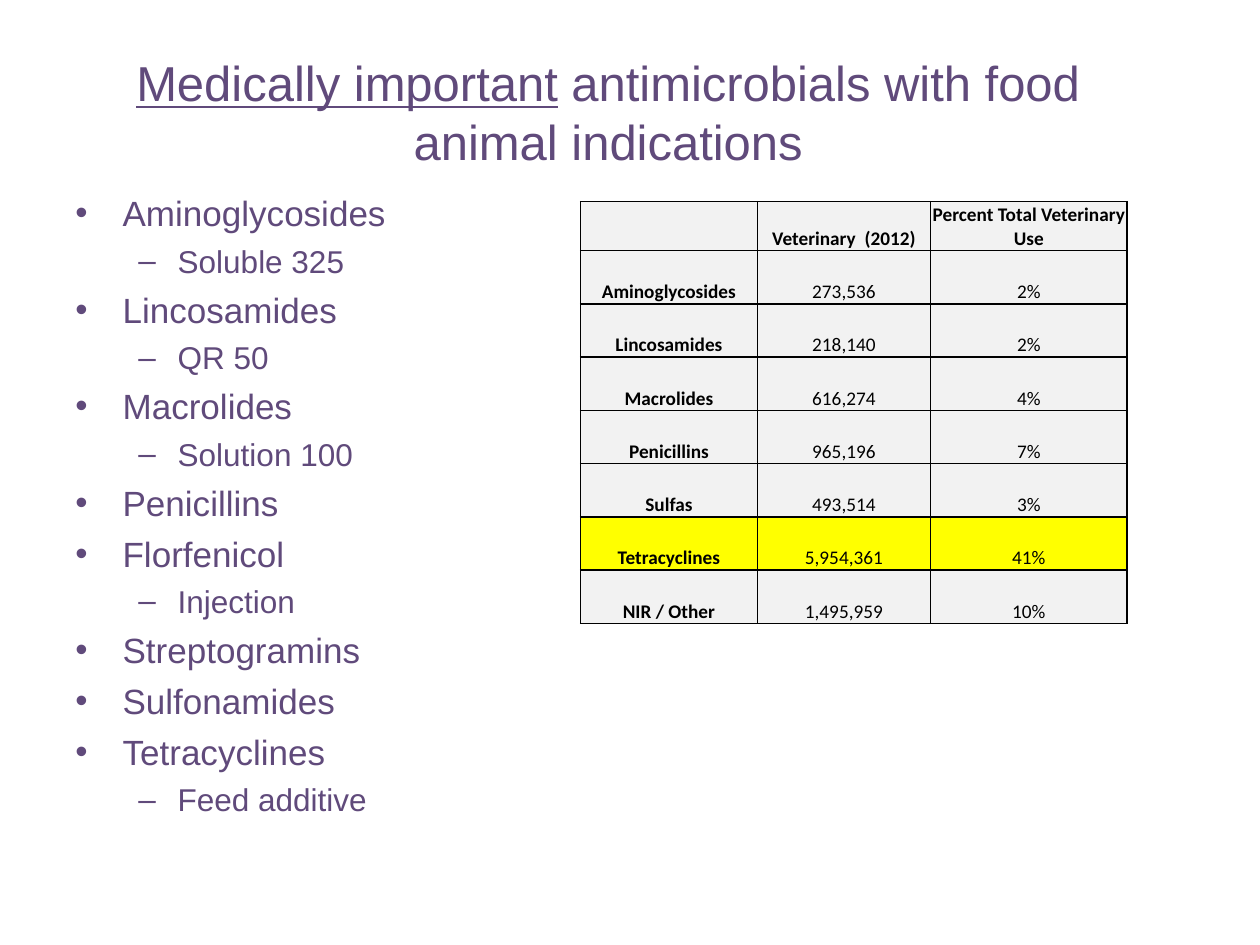
import pptx
import pptx.chart.data
import pptx.dml.color
import pptx.enum.text
import pptx.oxml
import pptx.oxml.ns
import pptx.util
import lxml.etree

Pt = pptx.util.Pt
Color = pptx.dml.color.RGBColor.from_string
Align = pptx.enum.text.PP_ALIGN
Anchor = pptx.enum.text.MSO_ANCHOR
qn = pptx.oxml.ns.qn

theme = {
    "purple": Color("604A7B"),
    "black": Color("000000"),
    "grey": Color("F2F2F2"),
    "yellow": Color("FFFF00"),
    "title": {"name": "Arial", "size": Pt(28)},
    "drug class": {"name": "Arial", "size": Pt(20)},
    "product": {"name": "Arial", "size": Pt(18)},
    "cell": {"name": "Calibri", "size": Pt(11)},
}


def set_font(font, style, color, **extra):
    for name, value in {**theme[style], **extra}.items():
        setattr(font, name, value)
    font.color.rgb = theme[color]


def add_box(left, top, width, height, anchor):
    box = page.shapes.add_textbox(Pt(left), Pt(top), Pt(width), Pt(height))
    box.text_frame.word_wrap = True
    box.text_frame.vertical_anchor = anchor
    return box.text_frame


deck = pptx.Presentation()
deck.slide_width, deck.slide_height = Pt(720), Pt(540)
page = deck.slides.add_slide(deck.slide_layouts[6])

title = add_box(36, 23, 623, 81.5, Anchor.MIDDLE)
para = title.paragraphs[0]
para.alignment = Align.CENTER
for text, underline in [("Medically important", True),
                        (" antimicrobials with food animal indications", False)]:
    span = para.add_run()
    span.text = text
    set_font(span.font, "title", "purple", underline=underline)

levels = [
    {"style": "drug class", "bullet": "•", "margin": 27, "hang": 27, "before": 5},
    {"style": "product", "bullet": "–", "margin": 58.5, "hang": 22.5, "before": 4.6},
]
drugs = [
    (0, "Aminoglycosides"), (1, "Soluble 325"),
    (0, "Lincosamides"), (1, "QR 50"),
    (0, "Macrolides"), (1, "Solution 100"),
    (0, "Penicillins"),
    (0, "Florfenicol"), (1, "Injection"),
    (0, "Streptogramins"),
    (0, "Sulfonamides"),
    (0, "Tetracyclines"), (1, "Feed additive"),
]
body = add_box(36, 106, 648, 366, Anchor.TOP)
for index, (depth, text) in enumerate(drugs):
    level = levels[depth]
    para = body.add_paragraph() if index else body.paragraphs[0]
    para.level = depth
    if index:
        para.space_before = Pt(level["before"])
    properties = para._p.get_or_add_pPr()
    properties.set("marL", str(Pt(level["margin"])))
    properties.set("indent", str(-Pt(level["hang"])))
    lxml.etree.SubElement(properties, qn("a:buFont"), typeface="Arial")
    lxml.etree.SubElement(properties, qn("a:buChar"), char=level["bullet"])
    span = para.add_run()
    span.text = text
    set_font(span.font, level["style"], "purple")

usage = [
    ("", "Veterinary  (2012)", "Percent Total Veterinary Use"),
    ("Aminoglycosides", "273,536", "2%"),
    ("Lincosamides", "218,140", "2%"),
    ("Macrolides", "616,274", "4%"),
    ("Penicillins", "965,196", "7%"),
    ("Sulfas", "493,514", "3%"),
    ("Tetracyclines", "5,954,361", "41%"),
    ("NIR / Other", "1,495,959", "10%"),
]
widths = [101, 99, 112.32]
heights = [28] + [30.45] * (len(usage) - 1)
frame = page.shapes.add_table(len(usage), len(widths), Pt(331.8), Pt(115.2),
                              Pt(sum(widths)), Pt(sum(heights)))
table = frame.table
for column, width in zip(table.columns, widths):
    column.width = Pt(width)
for row, height in zip(table.rows, heights):
    row.height = Pt(height)

cell_format = {
    "margin_left": Pt(0.7), "margin_right": Pt(0.7),
    "margin_top": Pt(0.7), "margin_bottom": Pt(0),
    "vertical_anchor": Anchor.BOTTOM,
}
for row_index, values in enumerate(usage):
    fill = "yellow" if values[0] == "Tetracyclines" else "grey"
    for column_index, text in enumerate(values):
        cell = table.cell(row_index, column_index)
        for name, value in cell_format.items():
            setattr(cell, name, value)
        properties = cell._tc.get_or_add_tcPr()
        for side in ("lnL", "lnR", "lnT", "lnB"):
            border = lxml.etree.SubElement(properties, qn("a:" + side), w=str(Pt(1)))
            paint = lxml.etree.SubElement(border, qn("a:solidFill"))
            lxml.etree.SubElement(paint, qn("a:srgbClr"), val=str(theme["black"]))
        cell.fill.solid()
        cell.fill.fore_color.rgb = theme[fill]
        para = cell.text_frame.paragraphs[0]
        para.alignment = Align.CENTER
        if text:
            span = para.add_run()
            span.text = text
            set_font(span.font, "cell", "black", bold=row_index == 0 or column_index == 0)

deck.save("out.pptx")
